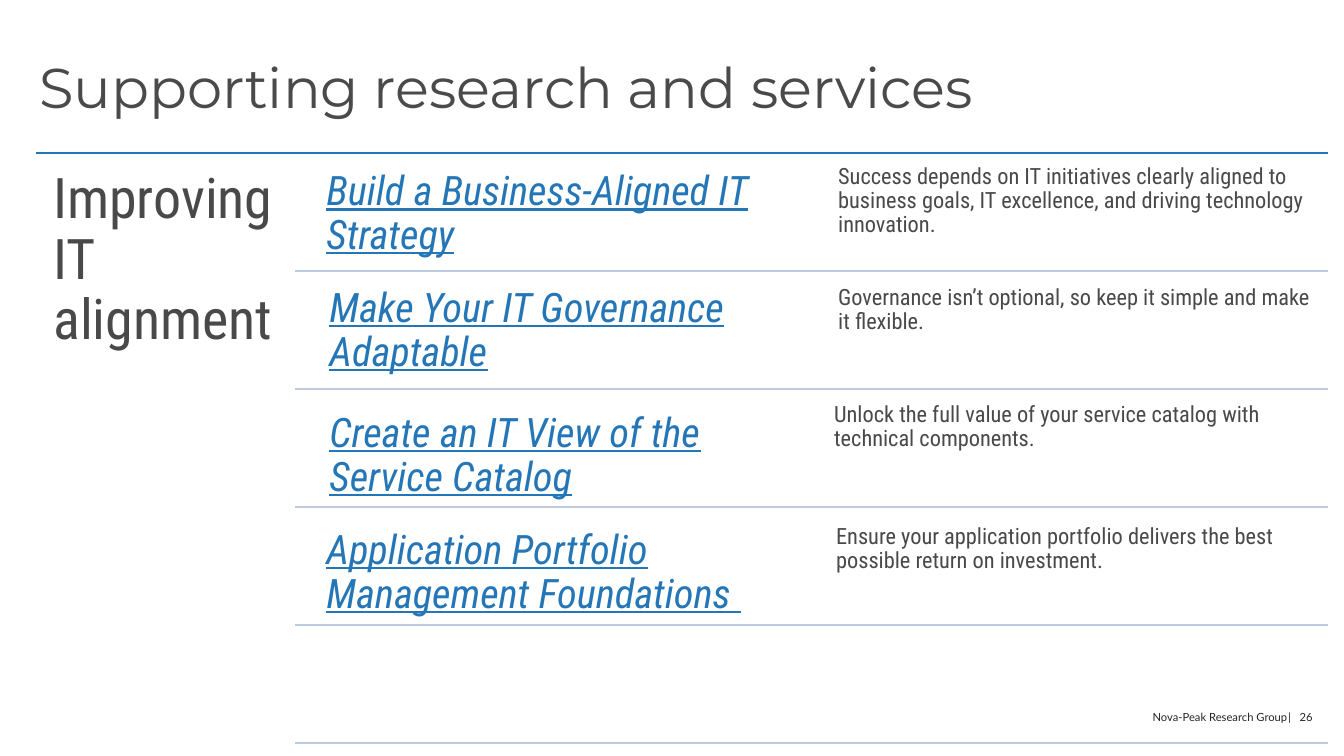
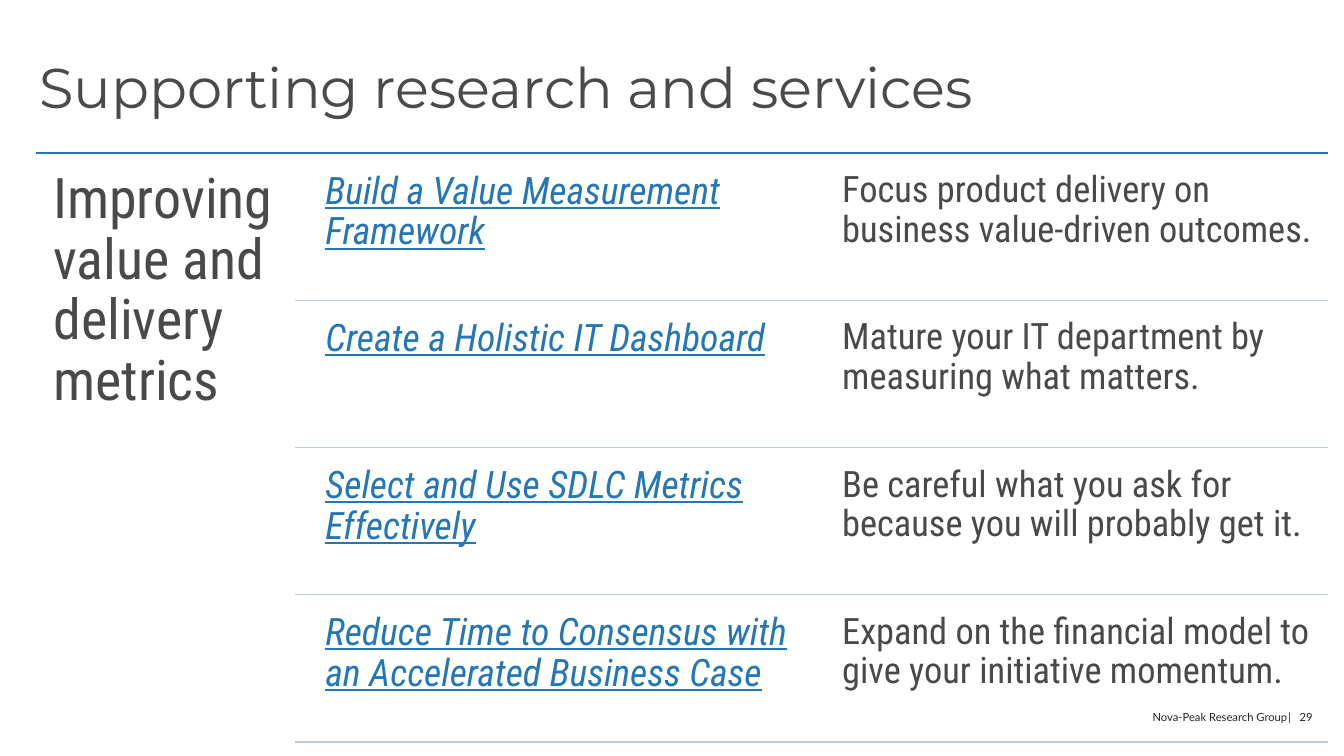
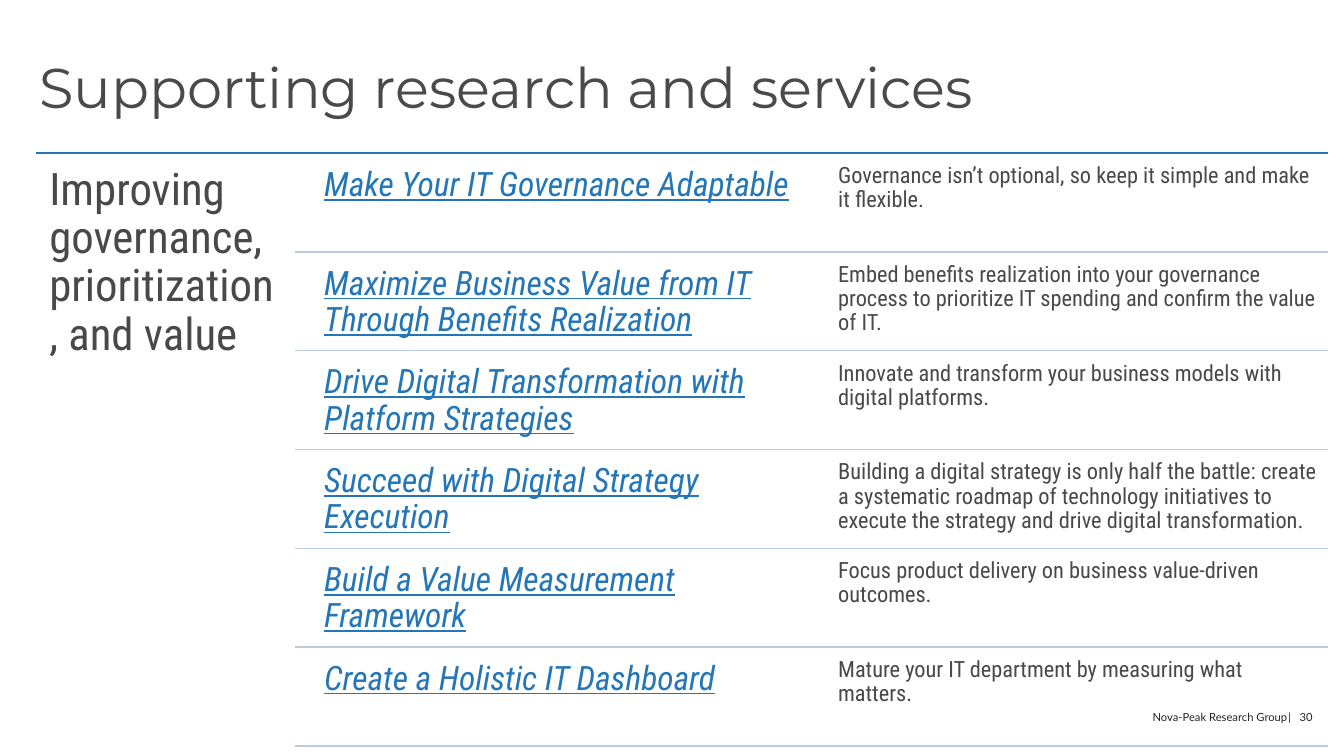
from dataclasses import dataclass

from lxml import etree
from pptx import Presentation
from pptx import util as u
from pptx.dml.color import RGBColor
from pptx.enum import shapes, text
from pptx.oxml.ns import qn

# Shared style
INK, TITLE_INK, FOOTER_INK = "494949", "4A4A4A", "242424"
BLUE, PALE = "2476B7", "BECADF"
BODY_FONT, TITLE_FONT, FOOTER_FONT = "Roboto Condensed", "Montserrat", "Lato"
TITLE = "Supporting research and services"
PUBLISHER = "Nova-Peak Research Group"

# Shared grid, in inches
LEFT, TOP, RIGHT = 0.36, 1.52, 13.18
TOPIC_WIDTH, TOPIC_HEIGHT = 2.56, 5.93
ROWS_LEFT = 2.93
LINK_OFFSET, NOTE_OFFSET, CELL_WIDTH = 0.19, 5.32, 4.94


@dataclass
class Row:
    link: str
    note: str
    link_nudge: tuple = (0, 0)
    note_nudge: tuple = (0, 0)


@dataclass
class Style:
    """Text sizes in points; insets, row pitch and gap in inches."""
    topic_size: float
    topic_inset: float
    link_size: float
    link_inset: float
    note_size: float
    note_inset: float
    pitch: float
    gap: float


def color(value):
    return RGBColor.from_string(value)


def add_span(para, words, size, font, ink, link=False):
    span = para.add_run()
    span.text = words
    span.font.size = u.Pt(size)
    span.font.name = font
    span.font.color.rgb = color(ink)
    if link:
        span.font.italic = True
        span.font.underline = True


def set_frame(box, inset):
    frame = box.text_frame
    frame.word_wrap = True
    frame.auto_size = text.MSO_AUTO_SIZE.NONE
    frame.vertical_anchor = text.MSO_ANCHOR.TOP
    frame.margin_left = frame.margin_right = u.Inches(inset)
    frame.margin_top = frame.margin_bottom = u.Inches(inset)
    para = frame.paragraphs[0]
    para.alignment = text.PP_ALIGN.LEFT
    para.line_spacing = 0.9
    return para


def add_text(page, left, top, width, height, inset):
    box = page.shapes.add_textbox(*map(u.Inches, (left, top, width, height)))
    return set_frame(box, inset)


def add_rule(page, left, top, ink):
    line = page.shapes.add_connector(
        shapes.MSO_CONNECTOR.STRAIGHT,
        *map(u.Inches, (left, top, RIGHT, top)))
    line.line.color.rgb = color(ink)
    line.line.width = u.Pt(1)
    etree.SubElement(line._element.spPr, qn("a:effectLst"))


def add_title(page):
    box = page.shapes.title
    box.left, box.top = u.Inches(0.39), u.Inches(0.6)
    box.width, box.height = u.Inches(12.6), u.Inches(1.24)
    add_span(set_frame(box, 0), TITLE, 40, TITLE_FONT, TITLE_INK)


def add_footer(page, number):
    para = add_text(page, 11.44, 7.05, 1.8, 0.15, 0)
    para.line_spacing = 1.0
    stops = etree.SubElement(para._p.get_or_add_pPr(), qn("a:tabLst"))
    for position, align in ((1.36, "ctr"), (1.46, "l")):
        etree.SubElement(stops, qn("a:tab"),
                         pos=str(u.Inches(position)), algn=align)
    for words in (PUBLISHER, "\t|", f"\t{number}"):
        add_span(para, words, 8, FOOTER_FONT, FOOTER_INK)


def add_topic(page, topic, style):
    para = add_text(page, LEFT, TOP, TOPIC_WIDTH, TOPIC_HEIGHT,
                    style.topic_inset)
    add_span(para, topic, style.topic_size, BODY_FONT, INK)


def add_row(page, row, left, top, style):
    """One link with its note, closed by a pale rule."""
    height = style.pitch - style.gap
    cells = (
        (row.link, LINK_OFFSET, row.link_nudge, style.link_size,
         style.link_inset, BLUE, True),
        (row.note, NOTE_OFFSET, row.note_nudge, style.note_size,
         style.note_inset, INK, False),
    )
    for words, offset, (right, down), size, inset, ink, link in cells:
        para = add_text(page, left + offset + right, top + style.gap + down,
                        CELL_WIDTH, height, inset)
        add_span(para, words, size, BODY_FONT, ink, link)
    add_rule(page, left, top + style.pitch, PALE)


def add_research_page(deck, number, topic, style, rows, rules=0):
    page = deck.slides.add_slide(deck.slide_layouts[5])
    add_footer(page, number)
    add_title(page)
    add_rule(page, LEFT, TOP, BLUE)
    add_topic(page, topic, style)
    for index, row in enumerate(rows):
        add_row(page, row, ROWS_LEFT, TOP + index * style.pitch, style)
    # Rules that close rows without text
    for index in range(len(rows), len(rows) + rules):
        add_rule(page, ROWS_LEFT, TOP + (index + 1) * style.pitch, PALE)


def main():
    deck = Presentation()
    deck.slide_width, deck.slide_height = u.Inches(13.34), u.Inches(7.5)

    # Rows that appear on more than one page
    governance = Row(
        "Make Your IT Governance Adaptable",
        "Governance isn’t optional, so keep it simple and make it flexible.")
    measurement = Row(
        "Build a Value Measurement Framework",
        "Focus product delivery on business value-driven outcomes.")
    dashboard = Row(
        "Create a Holistic IT Dashboard",
        "Mature your IT department by measuring what matters.")

    add_research_page(
        deck, 26, "Improving IT alignment",
        Style(40, 0.17, 29, 0.12, 16, 0.07, pitch=1.17, gap=0.05),
        [
            Row("Build a Business-Aligned IT Strategy",
                "Success depends on IT initiatives clearly aligned to "
                "business goals, IT excellence, and driving technology "
                "innovation."),
            Row(governance.link, governance.note, (0.03, -0.01), (0, 0.03)),
            Row("Create an IT View of the Service Catalog",
                "Unlock the full value of your service catalog with "
                "technical components.", (0.03, 0.06), (-0.04, 0.02)),
            Row("Application Portfolio Management Foundations ",
                "Ensure your application portfolio delivers the best "
                "possible return on investment.", (0, 0.05), (-0.02, 0.06)),
        ], rules=1)

    add_research_page(
        deck, 29, "Improving value and delivery metrics",
        Style(40, 0.17, 27, 0.11, 26, 0.11, pitch=1.46, gap=0.07),
        [
            measurement,
            dashboard,
            Row("Select and Use SDLC Metrics Effectively",
                "Be careful what you ask for because you will probably "
                "get it."),
            Row("Reduce Time to Consensus with an Accelerated Business Case",
                "Expand on the financial model to give your initiative "
                "momentum."),
        ])

    add_research_page(
        deck, 30, "Improving governance, prioritization, and value",
        Style(32, 0.13, 24, 0.1, 16, 0.07, pitch=0.98, gap=0.04),
        [
            governance,
            Row("Maximize Business Value from IT Through Benefits "
                "Realization",
                "Embed benefits realization into your governance process to "
                "prioritize IT spending and confirm the value of IT."),
            Row("Drive Digital Transformation with Platform Strategies",
                "Innovate and transform your business models with digital "
                "platforms."),
            Row("Succeed with Digital Strategy Execution",
                "Building a digital strategy is only half the battle: create "
                "a systematic roadmap of technology initiatives to execute "
                "the strategy and drive digital transformation."),
            measurement,
            dashboard,
        ])

    deck.save("out.pptx")


if __name__ == "__main__":
    main()
